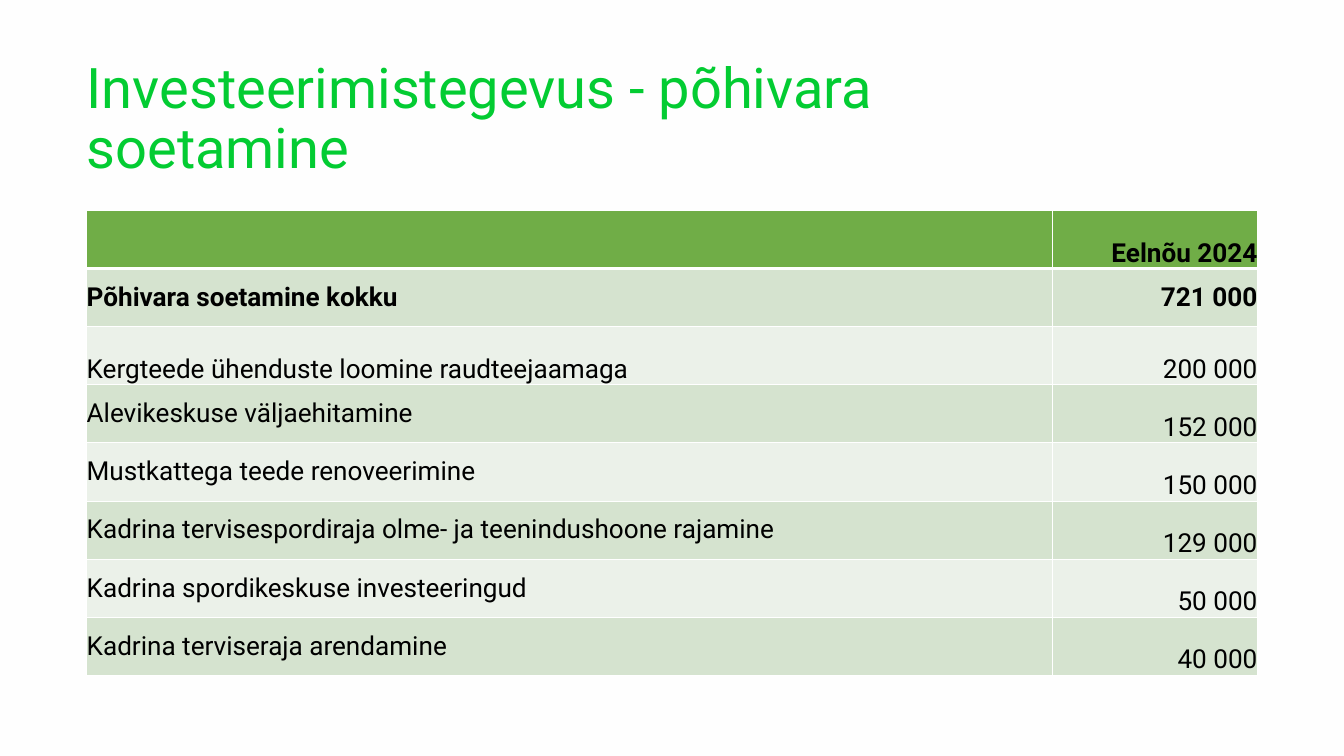
from dataclasses import dataclass

from lxml.etree import SubElement
from pptx import Presentation
from pptx.dml.color import RGBColor as RGB
from pptx.enum.text import MSO_ANCHOR as Anchor, MSO_AUTO_SIZE as Fit, PP_ALIGN as Align
from pptx.oxml.ns import qn
from pptx.util import Inches, Pt


@dataclass(frozen=True)
class Theme:
    font: str = "Roboto"
    back: str = "FEFEFE"
    title: str = "03CC32"
    ink: str = "000000"
    head: str = "70AD47"
    bands: tuple = ("D5E3CF", "EBF1E9")
    rule: str = "FFFFFF"
    title_size: int = 60
    cell_size: int = 28
    leading: float = 64.4
    thin: int = 1
    thick: int = 3


THEME = Theme()
TITLE = "Investeerimistegevus - põhivara soetamine"
HEAD = ("", "Eelnõu 2024")
TOTAL = ("Põhivara soetamine kokku", "721 000")
ITEMS = [
    ("Kergteede ühenduste loomine raudteejaamaga", "200 000"),
    ("Alevikeskuse väljaehitamine", "152 000"),
    ("Mustkattega teede renoveerimine", "150 000"),
    ("Kadrina tervisespordiraja olme- ja teenindushoone rajamine", "129 000"),
    ("Kadrina spordikeskuse investeeringud", "50 000"),
    ("Kadrina terviseraja arendamine", "40 000"),
]


def put_text(frame, text, *, size, color, bold=False, align=Align.LEFT, leading=None):
    """Write one formatted paragraph into a text frame."""
    para = frame.paragraphs[0]
    para.alignment = align
    if leading:
        para.line_spacing = Pt(leading)
    run = para.add_run()
    run.text = text
    font = run.font
    font.name, font.size, font.bold = THEME.font, Pt(size), bold
    font.color.rgb = RGB.from_string(color)


def set_fill(fill, color):
    fill.solid()
    fill.fore_color.rgb = RGB.from_string(color)


def set_edges(cell, **widths):
    """Draw the four cell borders; they must precede the fill in the XML."""
    props = cell._tc.get_or_add_tcPr()
    for side in "LRTB":
        width = Pt(widths.get(side, THEME.thin))
        line = SubElement(props, qn(f"a:ln{side}"), w=str(width))
        paint = SubElement(line, qn("a:solidFill"))
        SubElement(paint, qn("a:srgbClr"), val=THEME.rule)


def add_title(slide, left, top, width, height):
    title = slide.shapes.title
    title.left, title.top = Inches(left), Inches(top)
    title.width, title.height = Inches(width), Inches(height)
    frame = title.text_frame
    frame.margin_left = frame.margin_right = 0
    frame.margin_top = frame.margin_bottom = 0
    frame.word_wrap = True
    frame.auto_size = Fit.NONE
    frame.vertical_anchor = Anchor.TOP
    put_text(frame, TITLE, size=THEME.title_size, color=THEME.title,
             leading=THEME.leading)


def add_budget(slide, left, top, width, height, sum_width=3.05):
    rows = [HEAD, TOTAL, *ITEMS]
    table = slide.shapes.add_table(
        len(rows), 2, Inches(left), Inches(top), Inches(width), Inches(height)
    ).table
    table.first_row = table.horz_banding = False
    table.columns[0].width = Inches(width - sum_width)
    table.columns[1].width = Inches(sum_width)

    for r, row in enumerate(rows):
        table.rows[r].height = Inches(height / len(rows))
        for c, text in enumerate(row):
            cell = table.cell(r, c)
            cell.margin_left = cell.margin_right = 0
            cell.margin_top = cell.margin_bottom = 0
            # The total and the item names sit mid-row, the rest at the bottom
            middle = r == 1 or (c == 0 and r > 2)
            cell.vertical_anchor = Anchor.MIDDLE if middle else Anchor.BOTTOM
            # A thick rule parts the header from the body
            set_edges(cell, B=THEME.thick if r == 0 else THEME.thin,
                      T=THEME.thick if r == 1 else THEME.thin)
            set_fill(cell.fill, THEME.bands[(r - 1) % 2] if r else THEME.head)
            if text:
                put_text(cell.text_frame, text, size=THEME.cell_size,
                         color=THEME.ink, bold=r < 2,
                         align=Align.RIGHT if c else Align.LEFT)


def main():
    deck = Presentation()
    deck.slide_width, deck.slide_height = Inches(20), Inches(11.25)
    slide = deck.slides.add_slide(deck.slide_layouts[5])  # title only
    set_fill(slide.background.fill, THEME.back)
    add_title(slide, 1.29, 0.88, 15.7, 1.8)
    add_budget(slide, 1.29, 3.13, 17.42, 6.92)
    deck.save("out.pptx")


if __name__ == "__main__":
    main()
